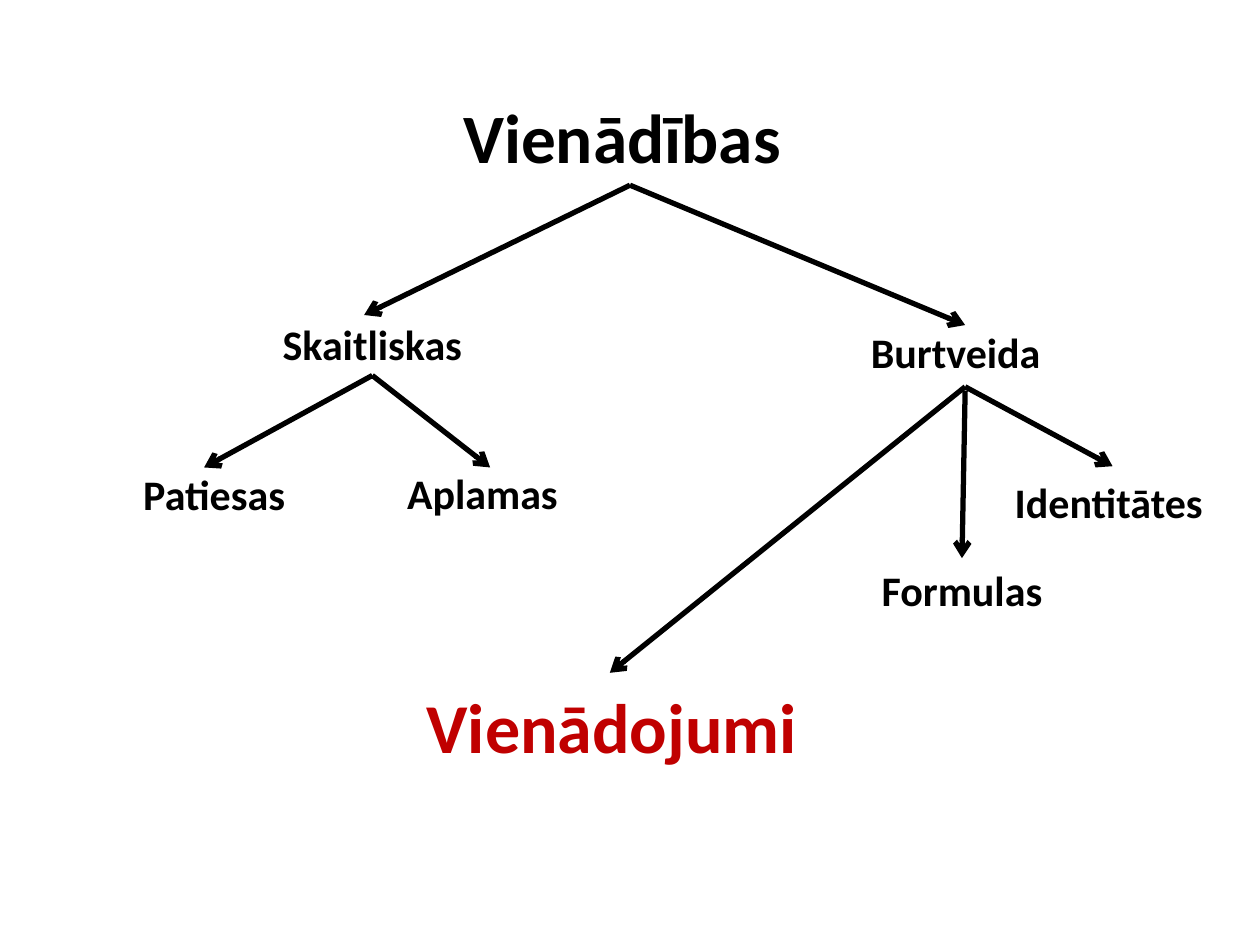
from lxml import etree
from pptx import Presentation
from pptx.dml.color import RGBColor
from pptx.enum.shapes import MSO_CONNECTOR as CONN
from pptx.enum.text import MSO_ANCHOR as ANCHOR, PP_ALIGN as ALIGN
from pptx.oxml.ns import qn
from pptx.util import Inches, Pt

BLACK, RED = "000000", "C00000"
BOTTOM, TOP = 2, 0

LABELS = {
    "Vienādības ": ((0.5, 0.68, 9, 0.79), 39.6, BLACK),
    "Skaitliskas": ((1.94, 2.48, 2.03, 0.5), 24, BLACK),
    "Burtveida": ((6.57, 2.54, 2.03, 0.5), 24, BLACK),
    "Patiesas": ((0.8, 3.67, 1.8, 0.5), 24, BLACK),
    "Aplamas": ((2.93, 3.66, 1.8, 0.5), 24, BLACK),
    "Identitātes": ((7.7, 3.73, 2.2, 0.5), 24, BLACK),
    "Formulas": ((6.57, 4.43, 2.13, 0.5), 24, BLACK),
    "Vienādojumi": ((3.2, 5.37, 3.31, 0.77), 40, RED),
}

ARROWS = [
    ((5, 1.47), (2.89, 2.5), "Vienādības ", None),
    ((5, 1.47), (7.66, 2.58), "Vienādības ", None),
    ((2.95, 3), (1.62, 3.71), "Skaitliskas", None),
    ((2.95, 3), (3.89, 3.71), "Skaitliskas", None),
    ((7.66, 3.07), (4.84, 5.34), None, None),
    ((7.66, 3.1), (7.64, 4.46), None, "Formulas"),
    ((7.66, 3.07), (8.83, 3.7), None, None),
]


def color(value):
    """Return the colour for a hex string."""
    return RGBColor.from_string(value)


def add_label(s, text, box, size, hex_color):
    """Place one bold centred label in its box."""
    sp = s.shapes.add_textbox(*map(Inches, box))
    tf = sp.text_frame
    tf.word_wrap = True
    tf.vertical_anchor = ANCHOR.MIDDLE
    p = tf.paragraphs[0]
    p.alignment = ALIGN.CENTER
    r = p.add_run()
    r.text = text
    for name, value in {"name": "Calibri", "size": Pt(size), "bold": True}.items():
        setattr(r.font, name, value)
    r.font.color.rgb = color(hex_color)
    return sp


def add_arrow(s, start, end, parent=None, child=None):
    """Draw an arrow, joined to the given labels."""
    cx = s.shapes.add_connector(CONN.STRAIGHT, *map(Inches, start + end))
    if parent is not None:
        cx.begin_connect(parent, BOTTOM)
    if child is not None:
        cx.end_connect(child, TOP)
    cx.line.width = Pt(3)
    cx.line.color.rgb = color(BLACK)
    etree.SubElement(cx.line._get_or_add_ln(), qn("a:tailEnd"), type="arrow")
    etree.SubElement(cx._element.spPr, qn("a:effectLst"))


def build_tree(s):
    """Place the labels and the arrows between them."""
    nodes = {text: add_label(s, text, *style) for text, style in LABELS.items()}
    for start, end, parent, child in ARROWS:
        add_arrow(s, start, end, nodes.get(parent), nodes.get(child))


def main():
    """Build and save the slide."""
    prs = Presentation()
    prs.slide_width, prs.slide_height = Inches(10), Inches(7.5)
    build_tree(prs.slides.add_slide(prs.slide_layouts[6]))
    prs.save("out.pptx")


if __name__ == "__main__":
    main()
